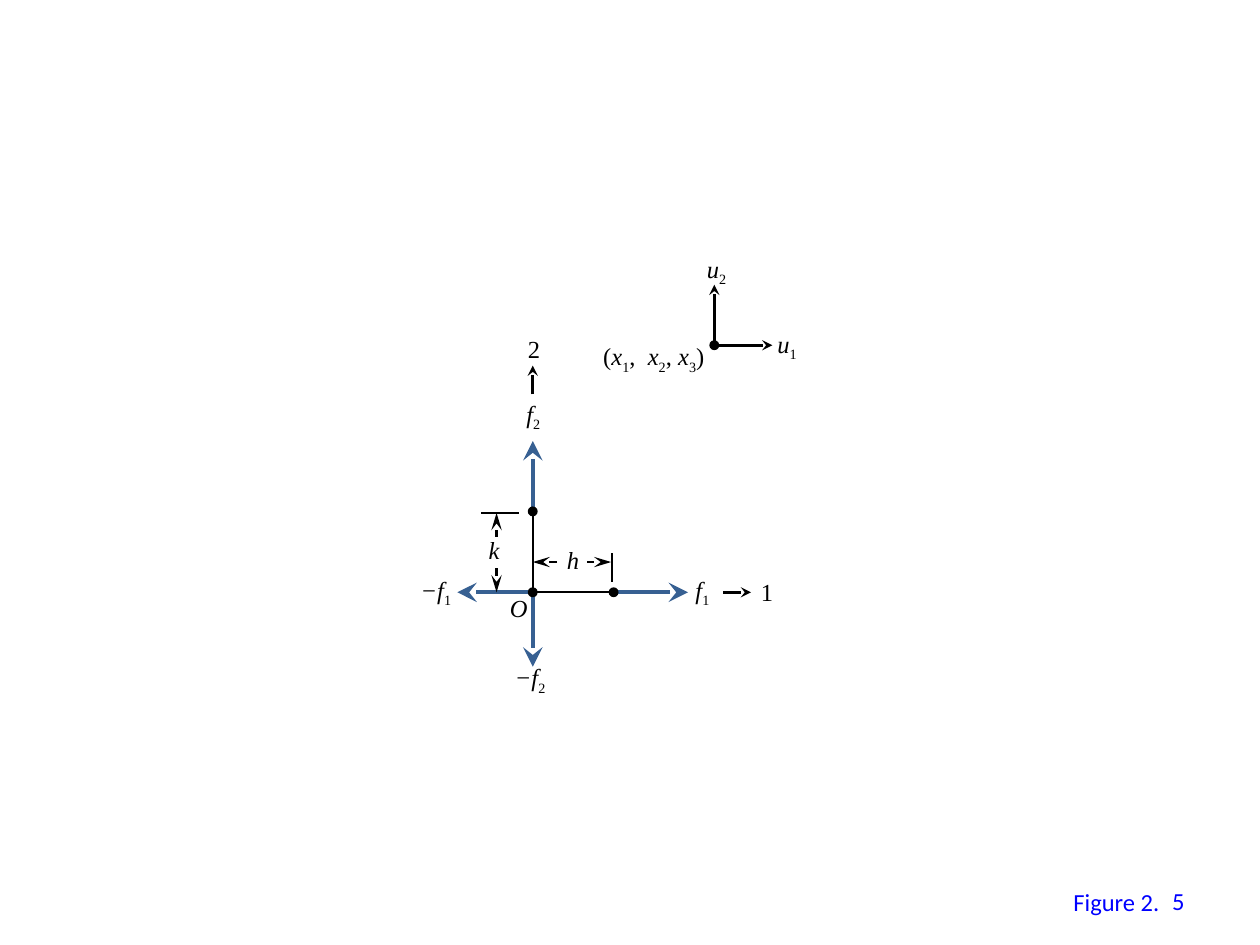
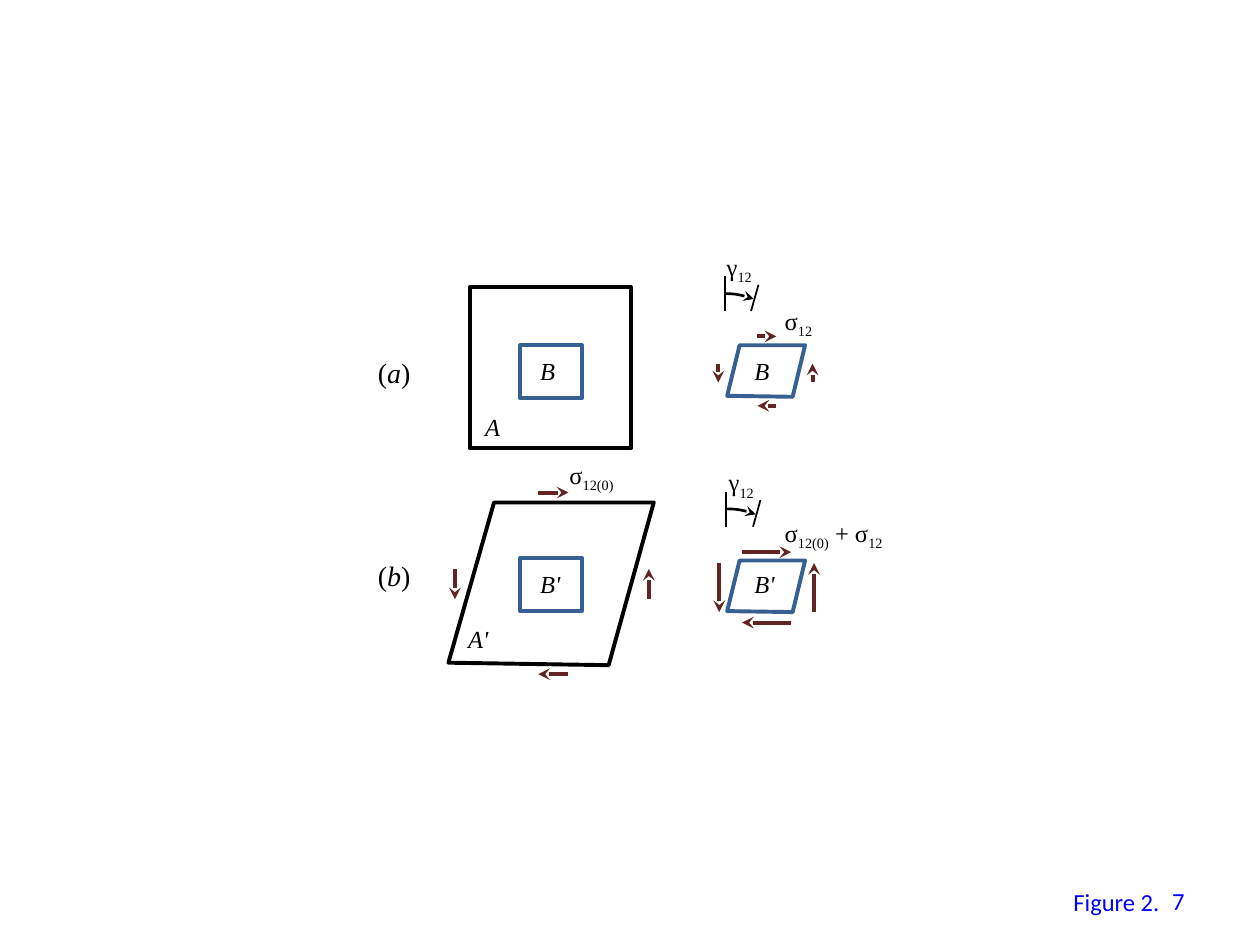
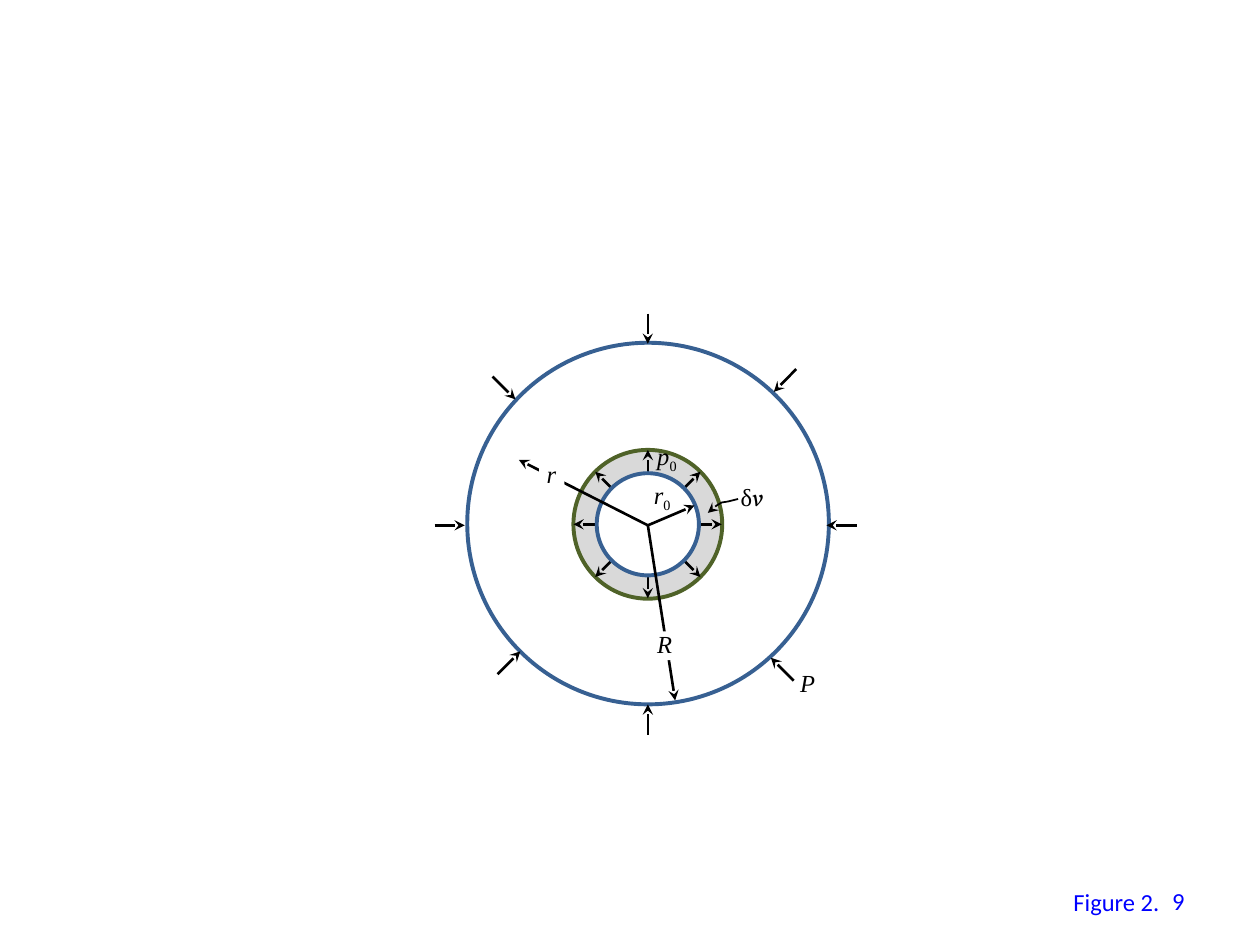
from math import cos, radians, sin

from lxml import etree
from pptx import Presentation
from pptx.dml.color import RGBColor
from pptx.enum.shapes import MSO_CONNECTOR, MSO_SHAPE
from pptx.enum.text import MSO_ANCHOR, MSO_AUTO_SIZE, PP_ALIGN
from pptx.oxml.ns import qn
from pptx.util import Cm, Pt

ELLIPSE = MSO_SHAPE.OVAL
RECTANGLE = MSO_SHAPE.RECTANGLE
ARC = MSO_SHAPE.ARC
STRAIGHT = MSO_CONNECTOR.STRAIGHT
RIGHT = PP_ALIGN.RIGHT
MIDDLE = MSO_ANCHOR.MIDDLE
FIT_SHAPE = MSO_AUTO_SIZE.SHAPE_TO_FIT_TEXT

COLORS = {
    "black": "000000",
    "white": "FFFFFF",
    "blue": "376092",
    "maroon": "632523",
    "olive": "4F6228",
    "gray": "D9D9D9",
    "caption": "0000FF",
}
MATH_FONT = "Times New Roman"
CAPTION_FONT = "Calibri"
VELOCITY_FONT = "Vollkorn"
THIN, MEDIUM, THICK = 1, 1.5, 2.25
ITALIC, SUBSCRIPT, UPRIGHT = "italic", "subscript", "upright"


def length(inches):
    """Convert a drawing coordinate in inches to a Cm length."""
    return Cm(round(inches * 2.54, 2))


def color(name):
    return RGBColor.from_string(COLORS[name])


def style_outline(shape, line_color, width):
    shape.line.color.rgb = color(line_color)
    shape.line.width = Pt(width)


def add_arrowhead(shape, end="tailEnd", head_width="med", head_length="med"):
    outline = shape.element.spPr.find(qn("a:ln"))
    etree.SubElement(outline, qn(f"a:{end}"), type="stealth",
                     w=head_width, len=head_length)


def add_line(slide, start, end, line_color="black", width=THIN):
    points = [length(value) for value in (*start, *end)]
    line = slide.shapes.add_connector(STRAIGHT, *points)
    style_outline(line, line_color, width)
    etree.SubElement(line.element.spPr, qn("a:effectLst"))
    return line


def add_arrow(slide, start, end, line_color="black", width=MEDIUM,
              head_width="med", head_length="med"):
    arrow = add_line(slide, start, end, line_color, width)
    add_arrowhead(arrow, "tailEnd", head_width, head_length)
    return arrow


def add_figure(slide, kind, box, fill=None, line_color=None, width=THICK):
    """Add a preset shape; box is left, top, width, height."""
    shape = slide.shapes.add_shape(kind, *[length(value) for value in box])
    shape.shadow.inherit = False
    if fill:
        shape.fill.solid()
        shape.fill.fore_color.rgb = color(fill)
    else:
        shape.fill.background()
    if line_color:
        style_outline(shape, line_color, width)
    else:
        shape.line.fill.background()
    return shape


def add_circle(slide, center, radius, fill=None, line_color=None):
    box = (center[0] - radius, center[1] - radius, 2 * radius, 2 * radius)
    return add_figure(slide, ELLIPSE, box, fill, line_color)


def add_dot(slide, center):
    add_circle(slide, center, 0.04, "black")


def add_outline(slide, points, line_color, width=THICK, close=True):
    corners = [(length(x), length(y)) for x, y in points]
    builder = slide.shapes.build_freeform(*corners[0])
    builder.add_line_segments(corners[1:], close=close)
    shape = builder.convert_to_shape()
    shape.shadow.inherit = False
    shape.fill.background()
    style_outline(shape, line_color, width)
    return shape


def format_run(run, size, font_name, color_name):
    run.font.size = Pt(size)
    run.font.name = font_name
    run.font.color.rgb = color(color_name)


def add_label(slide, left, top, width, *pieces, size=14, font=MATH_FONT,
              text_color="black"):
    """Add one line of text; each piece is (text, style[, font])."""
    box = slide.shapes.add_textbox(length(left), length(top), length(width),
                                   length(0.37 if size > 14 else 0.34))
    box.text_frame.word_wrap = False
    box.text_frame.auto_size = FIT_SHAPE
    paragraph = box.text_frame.paragraphs[0]
    for text, style, *special_font in pieces:
        run = paragraph.add_run()
        run.text = text
        format_run(run, size, special_font[0] if special_font else font,
                   text_color)
        run.font.italic = style == ITALIC
        if style == SUBSCRIPT:
            run.font._element.set("baseline", "-25000")


def add_symbol(slide, left, top, width, symbol, index=None):
    """Add an italic symbol with an optional lower index."""
    pieces = [(symbol, ITALIC)]
    if index:
        pieces.append((index, SUBSCRIPT))
    add_label(slide, left, top, width, *pieces)


def add_figure_slide(presentation, number):
    slide = presentation.slides.add_slide(presentation.slide_layouts[6])
    add_label(slide, 8.42, 6.99, 0.89, ("Figure 2.", UPRIGHT),
              font=CAPTION_FONT, text_color="caption")
    box = slide.shapes.add_textbox(length(7.17), length(6.95),
                                   length(2.33), length(0.4))
    frame = box.text_frame
    frame.text = str(number)
    frame.word_wrap = True
    frame.vertical_anchor = MIDDLE
    paragraph = frame.paragraphs[0]
    paragraph.alignment = RIGHT
    format_run(paragraph.runs[0], 14, CAPTION_FONT, "caption")
    return slide


def add_shear_arrows(slide, center, left, right, top, bottom, size):
    """Add the four shear stress arrows around a block."""
    x, y = center
    half = size / 2
    for start, end in (
        ((x - half, top), (x + half, top)),
        ((x + half, bottom), (x - half, bottom)),
        ((left, y - half), (left, y + half)),
        ((right, y + half), (right, y - half)),
    ):
        add_arrow(slide, start, end, "maroon", THICK)


def add_shear_angle(slide, left, top):
    base = top + 0.28
    add_line(slide, (left, base), (left, top))
    add_line(slide, (left + 0.21, base), (left + 0.27, top + 0.07))
    arc = add_figure(slide, ARC, (left - 0.66, top + 0.14, 1.32, 1.32),
                     line_color="black", width=MEDIUM)
    arc.adjustments[0] = 162
    arc.adjustments[1] = 174.4
    add_arrowhead(arc)
    add_label(slide, left - 0.08, top - 0.24, 0.44,
              ("γ", UPRIGHT), ("12", SUBSCRIPT))


def build_force_doublets(presentation):
    slide = add_figure_slide(presentation, 5)

    for start, end in (
        ((4.23, 4.06), (4.23, 3.5)),
        ((4.23, 4.73), (4.23, 5.29)),
        ((4.9, 4.7), (5.46, 4.7)),
        ((4.19, 4.7), (3.63, 4.7)),
    ):
        add_arrow(slide, start, end, "blue", THICK, "lg", "lg")

    for start, end in (
        ((5.74, 4.7), (5.96, 4.7)),
        ((4.23, 3.13), (4.23, 2.9)),
        ((5.67, 2.74), (6.13, 2.74)),
        ((5.67, 2.73), (5.67, 2.26)),
    ):
        add_arrow(slide, start, end)

    for start, end in (
        ((3.94, 4.26), (3.94, 4.07)),
        ((3.94, 4.51), (3.94, 4.7)),
        ((4.66, 4.46), (4.85, 4.46)),
        ((4.42, 4.46), (4.23, 4.46)),
    ):
        add_arrow(slide, start, end, head_length="lg")

    for start, end in (
        ((4.23, 4.69), (4.23, 4.06)),
        ((4.22, 4.7), (4.85, 4.7)),
        ((3.82, 4.07), (4.12, 4.07)),
        ((4.86, 4.39), (4.86, 4.62)),
    ):
        add_line(slide, start, end)

    for center in ((4.23, 4.7), (4.87, 4.7), (4.23, 4.06), (5.67, 2.74)):
        add_dot(slide, center)

    for symbol in (
        (3.95, 4.66, 0.4, "O"),
        (3.78, 4.2, 0.34, "k"),
        (4.4, 4.28, 0.35, "h"),
        (5.42, 4.51, 0.38, "f", "1"),
        (3.24, 4.51, 0.5, "−f", "1"),
        (4.08, 3.12, 0.38, "f", "2"),
        (3.99, 5.21, 0.5, "−f", "2"),
        (6.07, 2.56, 0.41, "u", "1"),
        (5.51, 1.97, 0.41, "u", "2"),
    ):
        add_symbol(slide, *symbol)
    add_label(slide, 5.94, 4.53, 0.3, ("1", UPRIGHT))
    add_label(slide, 4.09, 2.6, 0.3, ("2", UPRIGHT))
    add_label(slide, 4.69, 2.66, 1.04, ("(", UPRIGHT),
              ("x", ITALIC), ("1", SUBSCRIPT), (",  ", UPRIGHT),
              ("x", ITALIC), ("2", SUBSCRIPT), (", ", UPRIGHT),
              ("x", ITALIC), ("3", SUBSCRIPT), (")", UPRIGHT))


def build_sheared_blocks(presentation):
    slide = add_figure_slide(presentation, 7)

    for letter, top in (("a", 2.77), ("b", 4.38)):
        add_label(slide, 2.9, top, 0.46, ("(", UPRIGHT), (letter, ITALIC),
                  (")", UPRIGHT), size=16)

    add_figure(slide, RECTANGLE, (3.73, 2.28, 1.28, 1.28), line_color="black")
    add_outline(slide, ((3.92, 3.99), (5.19, 3.99), (4.83, 5.28), (3.56, 5.26)),
                "black")
    for top, name, name_width in ((2.74, "B", 0.37), (4.45, "B'", 0.42)):
        add_outline(slide, ((5.77, top + 0.4), (5.87, top),
                            (6.39, top), (6.29, top + 0.41)), "blue")
        square_top = 2.74 if name == "B" else 4.43
        add_figure(slide, RECTANGLE, (4.13, square_top, 0.49, 0.42),
                   line_color="blue")
        for left in (4.19, 5.89):
            add_symbol(slide, left, square_top + 0.04, name_width, name)
    add_symbol(slide, 3.75, 3.22, 0.37, "A")
    add_symbol(slide, 3.62, 4.9, 0.42, "A'")

    add_shear_arrows(slide, (4.39, 4.635), 3.61, 5.15, 3.91, 5.35, 0.24)
    add_shear_arrows(slide, (6.085, 2.96), 5.7, 6.45, 2.67, 3.22, 0.15)
    add_shear_arrows(slide, (6.085, 4.665), 5.71, 6.46, 4.38, 4.94, 0.39)
    add_shear_angle(slide, 5.75, 2.19)
    add_shear_angle(slide, 5.765, 3.9)

    sigma, applied, initial = ("σ", UPRIGHT), ("12", SUBSCRIPT), ("12(0)", SUBSCRIPT)
    add_label(slide, 6.13, 2.38, 0.44, sigma, applied)
    add_label(slide, 4.42, 3.6, 0.59, sigma, initial)
    add_label(slide, 6.13, 4.06, 1.04, sigma, initial, (" + σ", UPRIGHT), applied)


def build_pressurized_sphere(presentation):
    slide = add_figure_slide(presentation, 9)
    center = (5.14, 4.17)
    cavity_center = (5.14, 4.16)
    ring_radius = 0.59

    add_circle(slide, cavity_center, ring_radius, "gray", "olive")
    for angle in range(0, 180, 45):
        x = ring_radius * cos(radians(angle))
        y = ring_radius * sin(radians(angle))
        diameter = add_arrow(slide,
                             (cavity_center[0] + x, cavity_center[1] + y),
                             (cavity_center[0] - x, cavity_center[1] - y))
        outline = diameter.element.spPr.find(qn("a:ln"))
        outline.find(qn("a:tailEnd")).addprevious(
            etree.Element(qn("a:headEnd"), type="stealth"))
    add_circle(slide, cavity_center, 0.405, "white", "blue")

    add_symbol(slide, 6.25, 5.25, 0.37, "P")
    add_figure(slide, RECTANGLE, (5.13, 3.88, 0.19, 0.19), "white")
    add_label(slide, 5.78, 3.78, 0.41,
              ("δ", UPRIGHT), ("v", ITALIC, VELOCITY_FONT))
    add_circle(slide, (5.145, 4.155), 1.435, line_color="blue")
    add_arrow(slide, center, (5.36, 5.56))
    add_arrow(slide, center, (4.12, 3.65))
    leader = add_outline(slide, ((5.62, 4.07), (5.65, 4.04), (5.69, 4.01),
                                 (5.73, 3.99), (5.78, 3.98), (5.86, 3.96)),
                         "black", THIN, close=False)
    add_arrowhead(leader, "headEnd")

    # Tip of each pressure arrow and the outward direction of its shaft
    for (x, y), across, down in (
        ((5.14, 5.59), 0, 0.24),
        ((5.14, 2.73), 0, -0.24),
        ((6.56, 4.17), 0.24, 0),
        ((3.69, 4.17), -0.24, 0),
        ((4.09, 3.17), -0.18, -0.18),
        ((6.12, 5.22), 0.18, 0.18),
        ((6.14, 3.11), 0.18, -0.18),
        ((4.13, 5.17), -0.18, 0.18),
    ):
        add_arrow(slide, (x + across, y + down), (x, y))

    add_symbol(slide, 5.09, 3.76, 0.39, "r", "0")
    add_arrow(slide, center, (5.51, 4.01))
    add_symbol(slide, 5.12, 3.45, 0.42, "p", "0")
    add_figure(slide, RECTANGLE, (5.19, 5.01, 0.2, 0.23), "white")
    add_symbol(slide, 5.12, 4.94, 0.37, "R")
    add_figure(slide, RECTANGLE, (4.28, 3.64, 0.2, 0.23), "white")
    add_symbol(slide, 4.24, 3.59, 0.33, "r")


def main():
    presentation = Presentation()
    presentation.slide_width = Cm(25.4)
    presentation.slide_height = Cm(19.05)
    build_force_doublets(presentation)
    build_sheared_blocks(presentation)
    build_pressurized_sphere(presentation)
    presentation.save("out.pptx")


if __name__ == "__main__":
    main()
